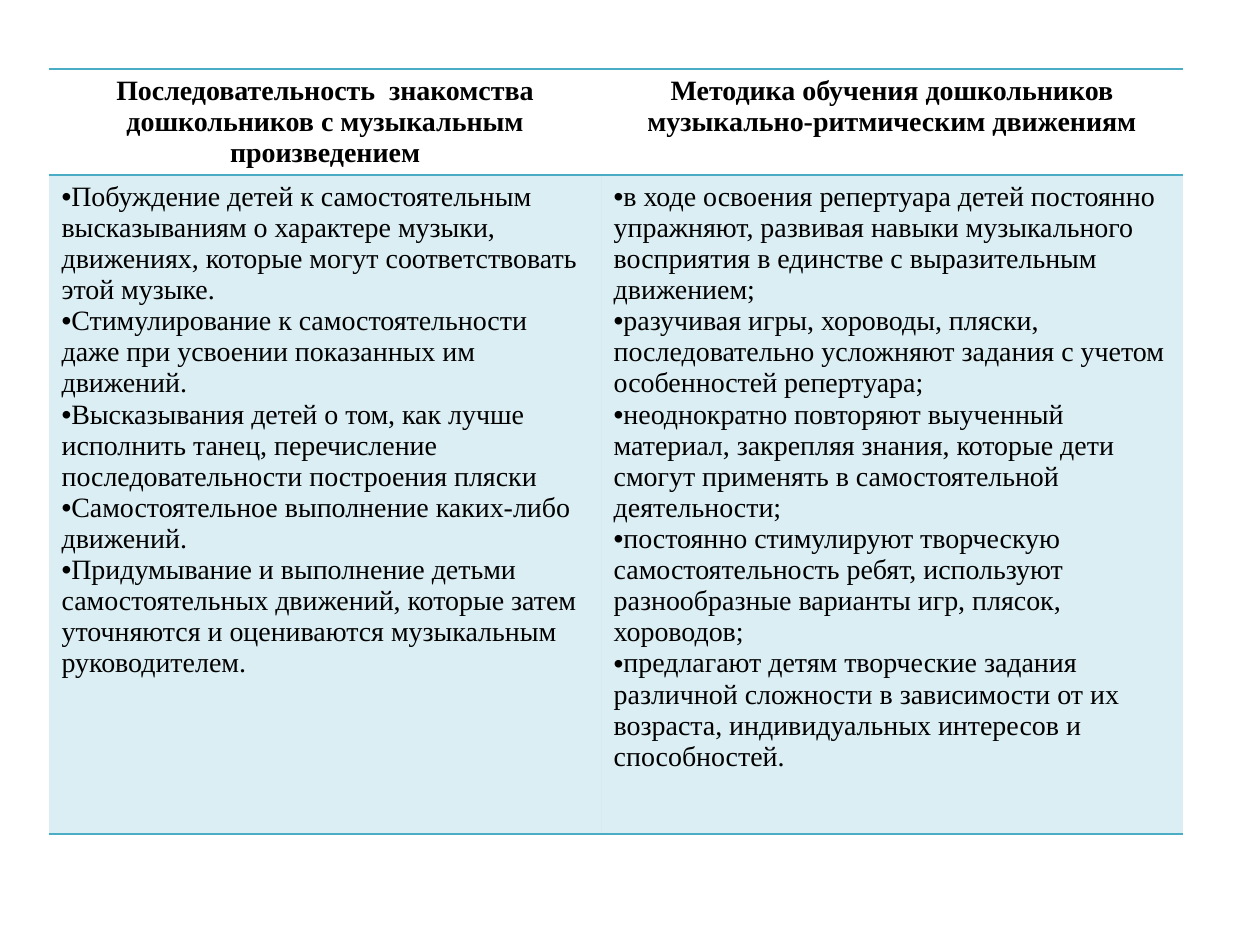
from lxml.etree import SubElement
from pptx import Presentation
from pptx.dml.color import RGBColor
from pptx.enum.text import PP_ALIGN
from pptx.oxml.ns import qn
from pptx.util import Pt

ACCENT = "4BACC6"
COLUMN_WIDTHS = (315.5, 332.5)
ROW_HEIGHTS = (60.5, 376.5)
HEADINGS = (
    "Последовательность  знакомства дошкольников с музыкальным произведением",
    "Методика обучения дошкольников музыкально-ритмическим движениям",
)
LISTS = (
    (
        "Побуждение детей к самостоятельным высказываниям о характере музыки, движениях, "
        "которые могут соответствовать этой музыке.",
        "Стимулирование к самостоятельности даже при усвоении показанных им движений.",
        "Высказывания детей о том, как лучше исполнить танец, перечисление "
        "последовательности построения пляски",
        "Самостоятельное выполнение каких-либо движений.",
        "Придумывание и выполнение детьми самостоятельных движений, которые затем "
        "уточняются и оцениваются музыкальным руководителем.",
    ),
    (
        "в ходе освоения репертуара детей постоянно упражняют, развивая навыки "
        "музыкального восприятия в единстве с выразительным движением;",
        "разучивая игры, хороводы, пляски, последовательно усложняют задания с учетом "
        "особенностей репертуара;",
        "неоднократно повторяют выученный материал, закрепляя знания, которые дети смогут "
        "применять в самостоятельной деятельности;",
        "постоянно стимулируют творческую самостоятельность ребят, используют "
        "разнообразные варианты игр, плясок, хороводов;",
        "предлагают детям творческие задания различной сложности в зависимости от их "
        "возраста, индивидуальных интересов и способностей.",
    ),
)


def color(hex_value):
    """Turn a hex string into a colour."""
    return RGBColor.from_string(hex_value)


def add_text(paragraph, text, bold):
    """Write one formatted run into a paragraph."""
    run = paragraph.add_run()
    run.text = text
    formats = {"name": "Times New Roman", "size": Pt(16), "bold": bold}
    for name, value in formats.items():
        setattr(run.font, name, value)
    run.font.color.rgb = color("000000")


def add_bullet(paragraph):
    """Give a paragraph a round bullet without an indent."""
    properties = paragraph._p.get_or_add_pPr()
    properties.set("marL", "0")
    properties.set("indent", "0")
    SubElement(properties, qn("a:buFont"), typeface="Arial")
    SubElement(properties, qn("a:buChar"), char="•")


def set_borders(cell):
    """Rule a cell above and below and leave its sides open."""
    properties = cell._tc.get_or_add_tcPr()
    for side in "LRTB":
        line = SubElement(properties, qn(f"a:ln{side}"), w=str(Pt(1)))
        if side in "LR":
            SubElement(line, qn("a:noFill"))
        else:
            fill = SubElement(line, qn("a:solidFill"))
            SubElement(fill, qn("a:srgbClr"), val=ACCENT)


def fill_heading(cell, text):
    """Write a centred bold heading on a clear background."""
    set_borders(cell)
    cell.fill.background()
    paragraph = cell.text_frame.paragraphs[0]
    paragraph.alignment = PP_ALIGN.CENTER
    add_text(paragraph, text, True)


def fill_list(cell, items):
    """Write a bulleted list on a pale tint of the accent colour."""
    set_borders(cell)
    cell.fill.solid()
    cell.fill.fore_color.rgb = color(ACCENT)
    tint = cell._tc.tcPr.find(f"{qn('a:solidFill')}/{qn('a:srgbClr')}")
    SubElement(tint, qn("a:alpha"), val="20000")
    frame = cell.text_frame
    for index, item in enumerate(items):
        paragraph = frame.add_paragraph() if index else frame.paragraphs[0]
        add_bullet(paragraph)
        add_text(paragraph, item, False)


def add_methods_table(slide):
    """Add the two-column table of teaching methods."""
    shape = slide.shapes.add_table(
        2, 2, Pt(28), Pt(39.5), Pt(sum(COLUMN_WIDTHS)), Pt(sum(ROW_HEIGHTS))
    )
    table = shape.table
    for name in ("first_row", "horz_banding"):
        setattr(table, name, False)
    for row, height in zip(table.rows, ROW_HEIGHTS):
        row.height = Pt(height)
    for index, width in enumerate(COLUMN_WIDTHS):
        table.columns[index].width = Pt(width)
        fill_heading(table.cell(0, index), HEADINGS[index])
        fill_list(table.cell(1, index), LISTS[index])


def main():
    """Build and save the presentation."""
    presentation = Presentation()
    presentation.slide_width = Pt(720)
    presentation.slide_height = Pt(540)
    slide = presentation.slides.add_slide(presentation.slide_layouts[6])
    add_methods_table(slide)
    presentation.save("out.pptx")


if __name__ == "__main__":
    main()
